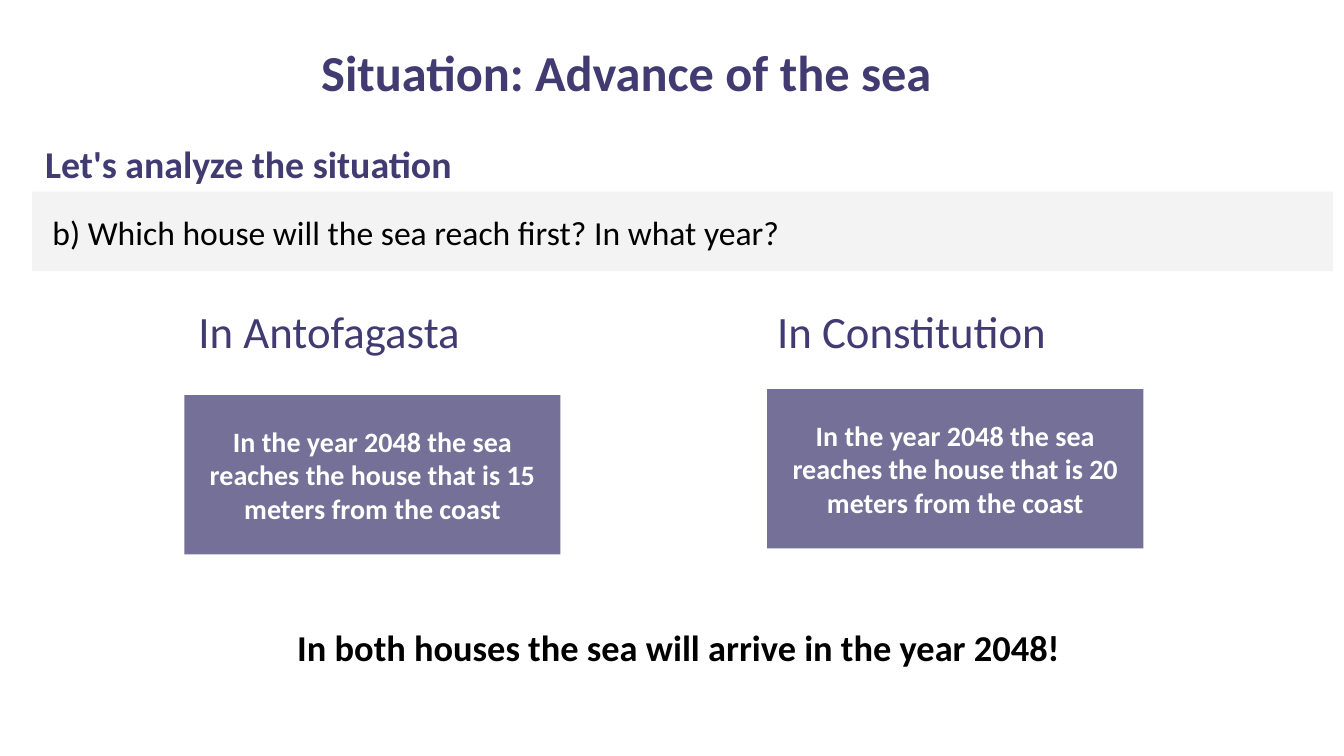
from pptx import Presentation
from pptx.dml.color import RGBColor
from pptx.enum.shapes import MSO_SHAPE
from pptx.enum.text import MSO_ANCHOR, MSO_AUTO_SIZE, PP_ALIGN
from pptx.util import Inches, Pt

RECTANGLE = MSO_SHAPE.RECTANGLE
TOP, MIDDLE = MSO_ANCHOR.TOP, MSO_ANCHOR.MIDDLE
LEFT, CENTER = PP_ALIGN.LEFT, PP_ALIGN.CENTER
NO_AUTOFIT = MSO_AUTO_SIZE.NONE
TITLE_ONLY = 5

FONT = "Calibri"
COLORS = {
    "purple": "423B71",
    "card": "747097",
    "band": "F3F3F3",
    "black": "000000",
    "white": "FFFFFF",
}


def color(name):
    """Return the named palette colour."""
    return RGBColor.from_string(COLORS[name])


def write(shape, text, size, ink, bold=False, align=LEFT, anchor=TOP, margins=(0.1, 0.05)):
    """Fill a shape with one formatted paragraph."""
    frame = shape.text_frame
    frame.word_wrap = True
    frame.auto_size = NO_AUTOFIT
    frame.vertical_anchor = anchor
    frame.margin_left = frame.margin_right = Inches(margins[0])
    frame.margin_top = frame.margin_bottom = Inches(margins[1])
    frame.text = text
    paragraph = frame.paragraphs[0]
    paragraph.alignment = align
    paragraph.line_spacing = 1.0
    paragraph.space_before = Pt(0)
    paragraph.font.name = FONT
    paragraph.font.size = Pt(size)
    paragraph.font.bold = bold
    paragraph.font.color.rgb = color(ink)


def add_label(slide, box, text, size, ink, **style):
    """Add a text box at the given box in inches."""
    write(slide.shapes.add_textbox(*map(Inches, box)), text, size, ink, **style)


def add_panel(slide, box, fill, text, size, ink, **style):
    """Add a flat filled rectangle holding text."""
    panel = slide.shapes.add_shape(RECTANGLE, *map(Inches, box))
    panel.shadow.inherit = False
    panel.fill.solid()
    panel.fill.fore_color.rgb = color(fill)
    panel.line.fill.background()
    write(panel, text, size, ink, **style)


def add_title(slide, box, text):
    """Move and format the title placeholder."""
    title = slide.shapes.title
    title.left, title.top, title.width, title.height = map(Inches, box)
    write(title, text, 36, "purple", bold=True, align=CENTER)


def add_question(slide, box):
    """Add the section heading and the question band beneath it."""
    left, top, width, height = box
    heading_height = 0.55
    add_label(slide, (left + 0.03, top, 6.04, heading_height),
              "Let's analyze the situation", 27, "purple", bold=True)
    add_panel(slide, (left, top + heading_height, width, height - heading_height), "band",
              "b) Which house will the sea reach first? In what year?", 24, "black",
              margins=(0.2, 0.2))


def add_city(slide, box, city, meters, heading_indent, card_offset):
    """Add a city heading with its answer card."""
    left, top, width, height = box
    add_label(slide, (left + heading_indent, top, width - heading_indent, 0.63),
              f"In {city}", 32, "purple")
    add_panel(slide, (left, top + card_offset, width, height - card_offset), "card",
              f"In the year 2048 the sea reaches the house that is {meters} meters from the coast",
              20, "white", bold=True, align=CENTER, anchor=MIDDLE)


def main():
    """Build and save the slide."""
    presentation = Presentation()
    presentation.slide_width = Inches(13.33)
    presentation.slide_height = Inches(7.5)
    slide = presentation.slides.add_slide(presentation.slide_layouts[TITLE_ONLY])
    add_title(slide, (1.75, 0.36, 8.93, 0.7), "Situation: Advance of the sea")
    add_question(slide, (0.32, 1.35, 12.9, 1.34))
    add_city(slide, (1.83, 2.96, 3.73, 2.54), "Antofagasta", 15, 0.04, 0.96)
    add_city(slide, (7.61, 2.96, 3.73, 2.48), "Constitution", 20, 0, 0.9)
    add_label(slide, (2.85, 6.1, 7.96, 0.63),
              "In both houses the sea will arrive in the year 2048!", 26, "black",
              bold=True, margins=(0.1, 0.1))
    presentation.save("out.pptx")


if __name__ == "__main__":
    main()
